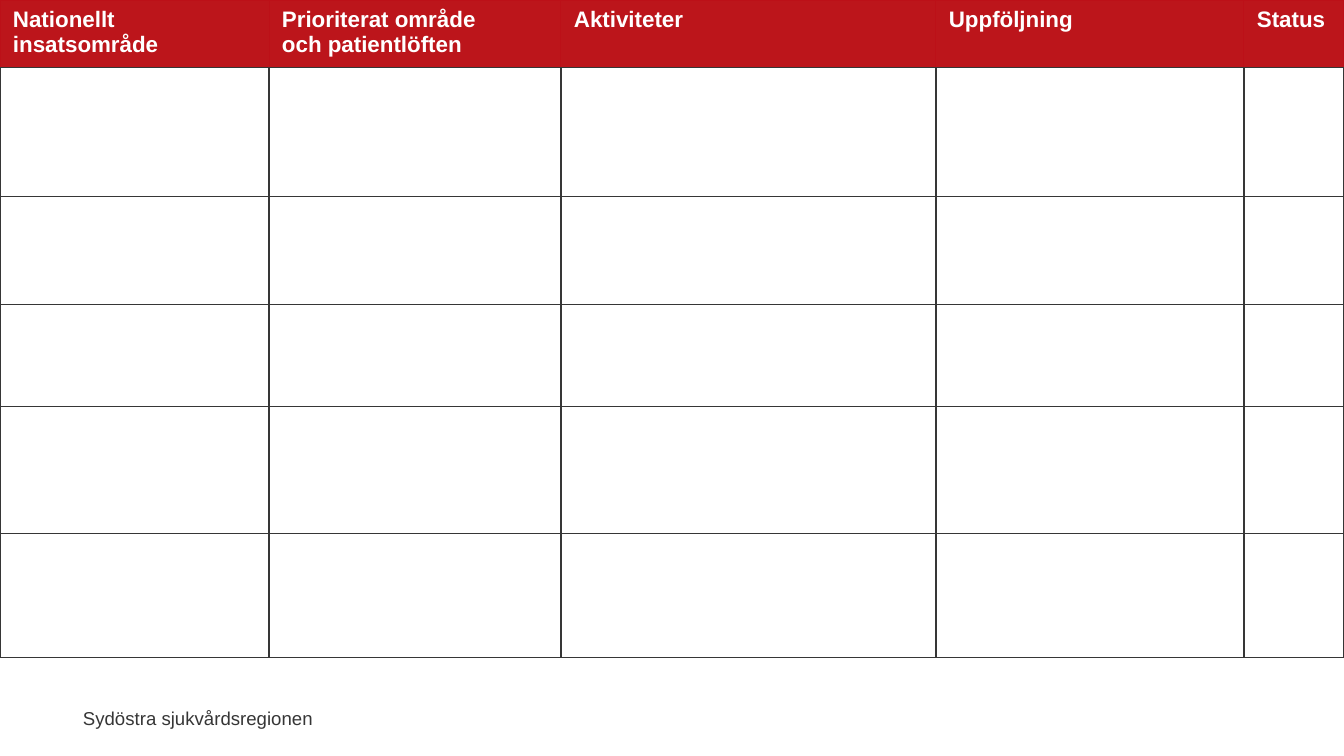
from dataclasses import dataclass

from lxml import etree
from pptx import Presentation
from pptx.dml.color import RGBColor
from pptx.enum.text import MSO_AUTO_SIZE, PP_ALIGN
from pptx.oxml.ns import qn
from pptx.util import Pt

RIGHT = PP_ALIGN.RIGHT
GROW = MSO_AUTO_SIZE.SHAPE_TO_FIT_TEXT

WIDE, HIGH = 1344, 756
SCALE = 12192000 / WIDE
RED, EDGE, INK, WHITE = "BC151B", "BC1018", "363636", "FFFFFF"
ROWS = [67, 129, 108, 102, 127, 124]
PADS = {"margin_left": 13, "margin_right": 13, "margin_top": 7, "margin_bottom": 7}


@dataclass
class Column:
    title: str
    width: int


@dataclass
class Line:
    color: str
    points: float


COLUMNS = [
    Column("Nationellt insatsområde", 269),
    Column("Prioriterat område \voch patientlöften", 292),
    Column("Aktiviteter", 375),
    Column("Uppföljning", 308),
    Column("Status", 100),
]
DARK, HEAD = Line(INK, 1), Line(EDGE, 0.75)


def emu(px: int) -> int:
    return round(px * SCALE)


def paint(target, color: str) -> None:
    target.rgb = RGBColor.from_string(color)


def style(font, color: str, **values) -> None:
    for name, value in {"name": "Arial", **values}.items():
        setattr(font, name, value)
    paint(font.color, color)


def border(cell, lines: dict[str, Line]) -> None:
    """Add the edges in schema order: L, R, T, B, before any fill."""
    props = cell._tc.get_or_add_tcPr()
    for side, line in lines.items():
        edge = etree.SubElement(props, qn(f"a:ln{side}"), w=str(Pt(line.points)))
        fill = etree.SubElement(edge, qn("a:solidFill"))
        etree.SubElement(fill, qn("a:srgbClr"), val=line.color)


def fill_cell(cell, head: bool) -> None:
    side = HEAD if head else DARK
    border(cell, {"L": side, "R": side, "T": side, "B": DARK})
    cell.fill.solid()
    paint(cell.fill.fore_color, RED if head else WHITE)
    for name, px in PADS.items():
        setattr(cell, name, emu(px))


def add_plan(slide) -> None:
    frame = slide.shapes.add_table(
        len(ROWS), len(COLUMNS), 0, 0, emu(WIDE), emu(sum(ROWS))
    )
    table = frame.table
    table.horz_banding = False
    for row, height in zip(table.rows, ROWS):
        row.height = emu(height)
    for index, column in enumerate(COLUMNS):
        table.columns[index].width = emu(column.width)
        for row in range(len(ROWS)):
            fill_cell(table.cell(row, index), row == 0)
        title = table.cell(0, index).text_frame
        title.text = column.title
        for run in title.paragraphs[0].runs:
            style(run.font, WHITE, size=Pt(16), bold=True)


def add_footer(slide) -> None:
    box = slide.shapes.add_textbox(emu(71), emu(702), emu(252), emu(33))
    frame = box.text_frame
    frame.word_wrap = False
    frame.auto_size = GROW
    para = frame.paragraphs[0]
    para.alignment = RIGHT
    run = para.add_run()
    run.text = "Sydöstra sjukvårdsregionen"
    style(run.font, INK, size=Pt(13.3))


def main() -> None:
    deck = Presentation()
    deck.slide_width, deck.slide_height = emu(WIDE), emu(HIGH)
    slide = deck.slides.add_slide(deck.slide_layouts[6])
    add_footer(slide)
    add_plan(slide)
    deck.save("out.pptx")


if __name__ == "__main__":
    main()
